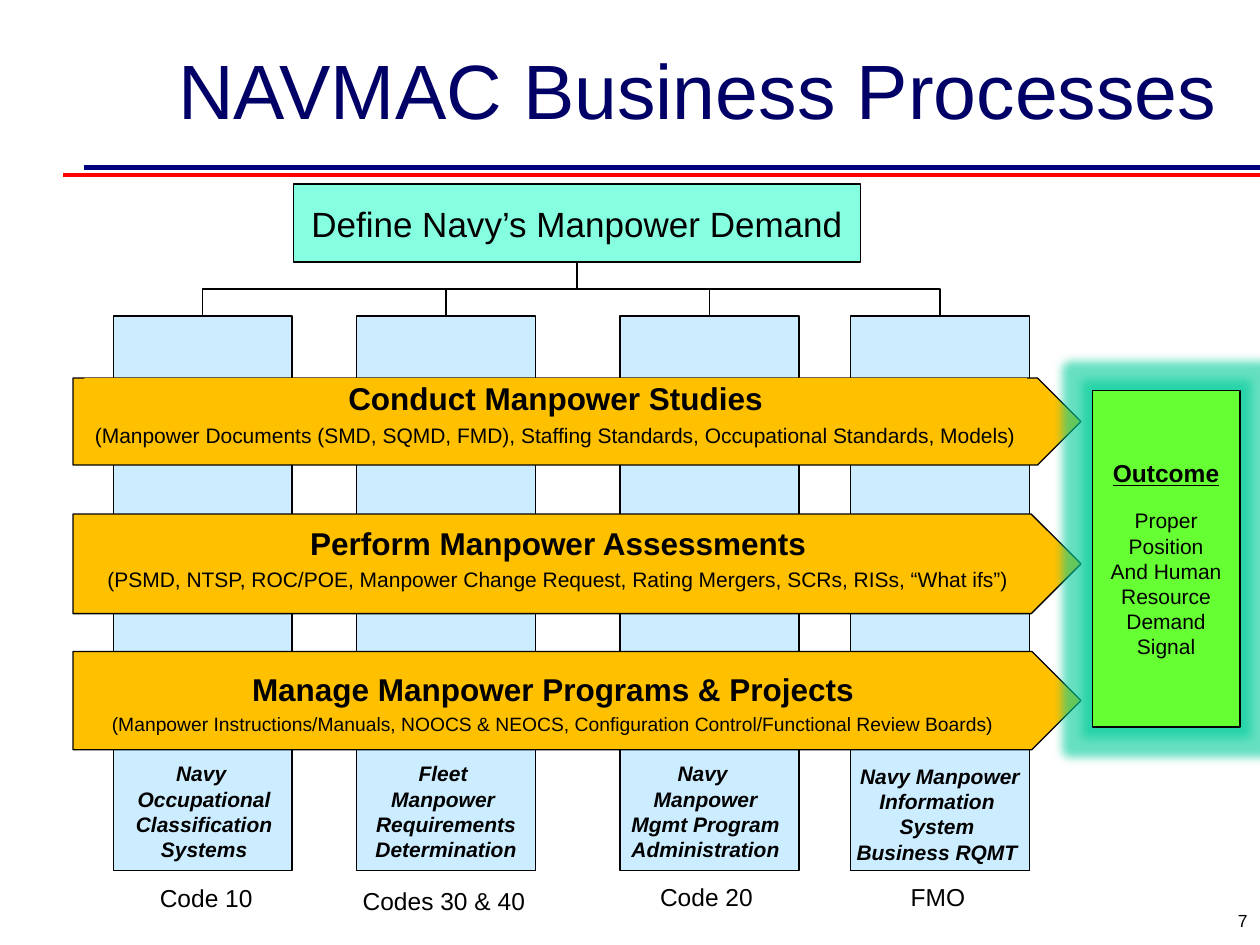
from dataclasses import dataclass

from lxml.etree import SubElement
from pptx import Presentation
from pptx.dml.color import RGBColor
from pptx.enum.shapes import MSO_CONNECTOR, MSO_SHAPE
from pptx.enum.text import MSO_ANCHOR, PP_ALIGN
from pptx.oxml.ns import qn
from pptx.util import Pt

PX = 9144  # EMU per px, 100 px to the inch


@dataclass(frozen=True)
class Theme:
    font: str = "Arial"
    ink: str = "000000"
    title: str = "000066"
    navy: str = "000080"
    red: str = "FF0000"
    column: str = "CCECFF"
    goal: str = "85FFE0"
    band: str = "FFC000"
    outcome: str = "66FF33"
    glow: str = "00CC99"
    title_size: int = 44
    goal_size: int = 20
    head_size: int = 18
    label_size: int = 14
    body_size: int = 12
    small_size: int = 11
    page_size: int = 10


T = Theme()


def px(*values):
    return [round(v * PX) for v in values]


def rgb(value):
    return RGBColor.from_string(value)


def add_box(s, box, kind=MSO_SHAPE.RECTANGLE, fill=None, line=None):
    sp = s.shapes.add_shape(kind, *px(*box))
    sp.shadow.inherit = False
    sp.fill.solid()
    sp.fill.fore_color.rgb = rgb(fill)
    if line:
        sp.line.color.rgb = rgb(T.ink)
        sp.line.width = Pt(line)
    else:
        sp.line.fill.background()
    return sp


def add_line(s, kind, ends, color, width):
    cn = s.shapes.add_connector(kind, *px(*ends))
    cn.line.color.rgb = rgb(color)
    cn.line.width = Pt(width)
    SubElement(cn._element.spPr, qn("a:effectLst"))
    return cn


def write(sp, lines, size, align=PP_ALIGN.CENTER, anchor=MSO_ANCHOR.TOP,
          wrap=True, color=T.ink, bold=False, italic=False, inset=10):
    """Fill a shape with one paragraph per line and return the paragraphs."""
    tf = sp.text_frame
    tf.word_wrap = wrap
    tf.vertical_anchor = anchor
    tf.margin_left = tf.margin_right = inset * PX
    tf.margin_top = tf.margin_bottom = 5 * PX
    for i, line in enumerate(lines):
        p = tf.paragraphs[0] if i == 0 else tf.add_paragraph()
        p.alignment = align
        r = p.add_run()
        r.text = line
        r.font.name, r.font.size = T.font, Pt(size)
        r.font.bold, r.font.italic = bold, italic
        r.font.color.rgb = rgb(color)
    return tf.paragraphs


def add_text(s, box, lines, size, **style):
    return write(s.shapes.add_textbox(*px(*box)), lines, size, **style)


def add_title(s, box, text):
    x, y, w, h = box
    add_text(s, box, [text], T.title_size, anchor=MSO_ANCHOR.MIDDLE, color=T.title)
    # Double rule under the title, running to the right edge
    for indent, drop, color in [(41, 0, T.navy), (58, 6, T.red)]:
        rule_y = y + h + drop
        add_line(s, MSO_CONNECTOR.STRAIGHT,
                 (x - indent, rule_y, x + w, rule_y), color, 2.5)


def add_column(s, box, text, label):
    """text and label are (dx, dy, width, lines) from the column's left and bottom."""
    x, y, w, h = box
    add_box(s, box, fill=T.column, line=1)
    dx, dy, tw, lines, inset = text
    add_text(s, (x + dx, y + h + dy, tw, 91), lines, T.body_size,
             bold=True, italic=True, inset=inset)
    dx, dy, tw, line = label
    add_text(s, (x + dx, y + h + dy, tw, 34), [line], T.label_size,
             align=PP_ALIGN.LEFT, wrap=False)


def add_goal(s, box, text, targets, target_y):
    x, y, w, h = box
    write(add_box(s, box, fill=T.goal, line=1), [text], T.goal_size,
          anchor=MSO_ANCHOR.MIDDLE, wrap=False)
    # Elbow connectors drop from the goal to each column
    start_x, start_y = x + w / 2, y + h
    for target_x in targets:
        run, drop = abs(target_x - start_x), target_y - start_y
        mid_x, mid_y = (start_x + target_x) / 2, (start_y + target_y) / 2
        side = -1 if target_x < start_x else 1
        cn = add_line(s, MSO_CONNECTOR.ELBOW,
                      (mid_x + side * drop / 2, mid_y - run / 2,
                       mid_x - side * drop / 2, mid_y + run / 2), T.ink, 0.75)
        turn = 90 if side < 0 else 270
        cn._element.spPr.find(qn("a:xfrm")).set("rot", str(turn * 60000))


def add_band(s, box, text_box, head, detail, detail_size, cover=False):
    """Arrow with a heading and a detail line; text_box is relative to the arrow."""
    x, y, w, h = box
    arrow = add_box(s, box, MSO_SHAPE.RIGHT_ARROW, T.band, 0.75)
    arrow.adjustments[0], arrow.adjustments[1] = 1, 0.5
    dx, dy, tw, th = text_box
    area = (x + dx, y + dy, tw, th)
    sp = add_box(s, area, fill=T.band) if cover else s.shapes.add_textbox(*px(*area))
    paragraphs = write(sp, [head, detail], T.head_size,
                       anchor=MSO_ANCHOR.MIDDLE, wrap=False)
    for p in paragraphs:
        p.line_spacing = 1.2
    paragraphs[0].runs[0].font.bold = True
    paragraphs[1].runs[0].font.size = Pt(detail_size)


def add_outcome(s, box, head, lines):
    sp = add_box(s, box, fill=T.outcome, line=1)
    effects = sp._element.spPr.find(qn("a:effectLst"))
    glow = SubElement(effects, qn("a:glow"), rad=str(11 * 12700))
    color = SubElement(glow, qn("a:srgbClr"), val=T.glow)
    SubElement(color, qn("a:alpha"), val="60000")
    paragraphs = write(sp, [head, *lines], T.body_size, anchor=MSO_ANCHOR.MIDDLE)
    font = paragraphs[0].runs[0].font
    font.size, font.bold, font.underline = Pt(T.label_size), True, True
    paragraphs[1].space_before = Pt(11.5)


def main():
    prs = Presentation()
    prs.slide_width, prs.slide_height = px(1000, 750)
    s = prs.slides.add_slide(prs.slide_layouts[6])

    add_title(s, (108, 8, 892, 125), "NAVMAC Business Processes")

    # Departments: left, text and label
    top, width, height = 251, 142, 440
    columns = [
        (90, (-7, -92, 158, ["Navy ", "Occupational", "Classification Systems"], 10),
         (27, 5, 96, "Code 10")),
        (283, (0, -92, 142, ["Fleet ", "Manpower ", "Requirements Determination"], 0),
         (-5, 7, 154, "Codes 30 & 40")),
        (492, (-7, -92, 150, ["Navy ", "Manpower Mgmt Program Administration"], 10),
         (22, 4, 96, "Code 20")),
        (675, (-8, -90, 158, ["Navy Manpower Information ", "System ", "Business RQMT "], 10),
         (38, 4, 64, "FMO")),
    ]
    for x, text, label in columns:
        add_column(s, (x, top, width, height), text, label)

    add_goal(s, (233, 146, 450, 62), "Define Navy’s Manpower Demand",
             [x + width / 2 for x, *_ in columns], top)

    # Processes that cross every department
    add_band(s, (58, 300, 800, 69), (9, 0, 748, 50), "Conduct Manpower Studies",
             "(Manpower Documents (SMD, SQMD, FMD), Staffing Standards, "
             "Occupational Standards, Models)", T.body_size, cover=True)
    add_band(s, (58, 408, 800, 79), (11, -4, 748, 71), "Perform Manpower Assessments",
             "(PSMD, NTSP, ROC/POE, Manpower Change Request, Rating Mergers, "
             "SCRs, RISs, “What ifs”)", T.body_size)
    add_band(s, (58, 517, 800, 78), (7, 0, 748, 75), "Manage Manpower Programs & Projects",
             "(Manpower Instructions/Manuals, NOOCS & NEOCS, "
             "Configuration Control/Functional Review Boards)", T.small_size)

    add_outcome(s, (867, 310, 117, 267), "Outcome",
                ["Proper Position", "And Human Resource", "Demand Signal"])

    # Page number
    add_text(s, (933, 717, 67, 33), ["7"], T.page_size, align=PP_ALIGN.RIGHT)

    prs.save("out.pptx")


if __name__ == "__main__":
    main()
